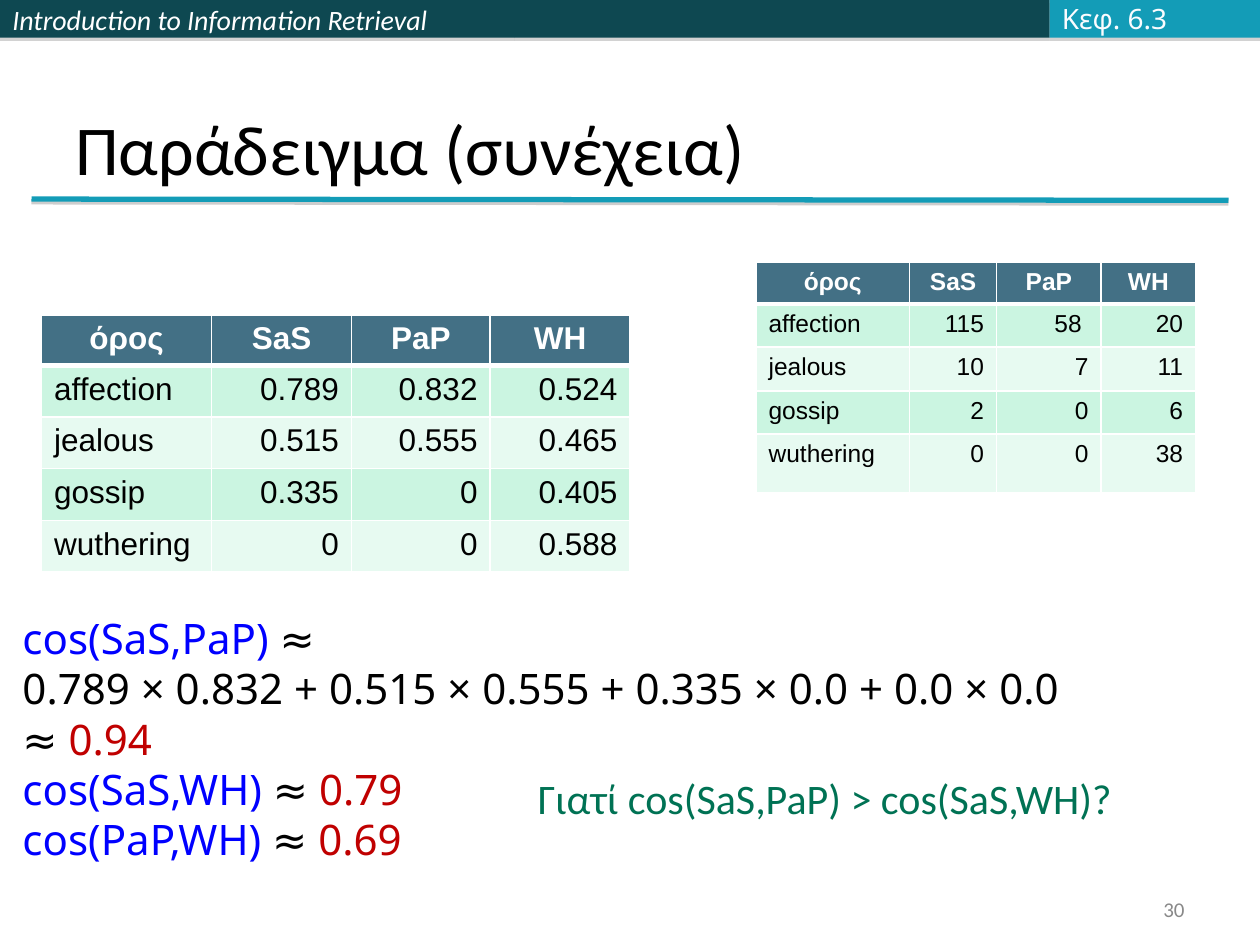
from pptx import Presentation
from pptx.dml.color import RGBColor
from pptx.enum.shapes import MSO_CONNECTOR, MSO_SHAPE
from pptx.enum.text import MSO_ANCHOR, PP_ALIGN
from pptx.oxml.ns import qn
from pptx.util import Inches, Pt
from lxml import etree

RECTANGLE = MSO_SHAPE.RECTANGLE
STRAIGHT = MSO_CONNECTOR.STRAIGHT
TOP, MIDDLE, BOTTOM = MSO_ANCHOR.TOP, MSO_ANCHOR.MIDDLE, MSO_ANCHOR.BOTTOM
LEFT, CENTER, RIGHT = PP_ALIGN.LEFT, PP_ALIGN.CENTER, PP_ALIGN.RIGHT

WHITE = RGBColor(0xFF, 0xFF, 0xFF)
OFF_WHITE = RGBColor(0xFB, 0xFC, 0xFF)
BLACK = RGBColor(0, 0, 0)
GRAY = RGBColor(0x89, 0x89, 0x89)
SHADOW_GRAY = RGBColor(0x80, 0x80, 0x80)
DARK_TEAL = RGBColor(0x0E, 0x48, 0x51)
TEAL = RGBColor(0x13, 0x9C, 0xB7)
HEADER_BLUE = RGBColor(0x43, 0x70, 0x85)
MINT = RGBColor(0xCB, 0xF5, 0xE1)
PALE_MINT = RGBColor(0xE7, 0xFA, 0xF1)
BLUE = RGBColor(0, 0, 0xFF)
RED = RGBColor(0xC0, 0, 0)
GREEN = RGBColor(0, 0x72, 0x54)

HEADINGS = ["όρος", "SaS", "PaP", "WH"]
WEIGHTS = [
    HEADINGS,
    ["affection", "0.789", "0.832", "0.524"],
    ["jealous", "0.515", "0.555", "0.465"],
    ["gossip", "0.335", "0", "0.405"],
    ["wuthering", "0", "0", "0.588"],
]
COUNTS = [
    HEADINGS,
    ["affection", "115", "58 ", "20"],
    ["jealous", "10", "7", "11"],
    ["gossip", "2", "0", "6"],
    ["wuthering", "0", "0", "38"],
]
SIMILARITIES = [
    [("cos(SaS,PaP) ", BLUE), ("≈", BLACK)],
    [("0.789 × 0.832 + 0.515 × 0.555 + 0.335 × 0.0 + 0.0 × 0.0", BLACK)],
    [("≈ ", BLACK), ("0.94", RED)],
    [("cos(SaS,WH)", BLUE), (" ≈ ", BLACK), ("0.79", RED)],
    [("cos(PaP,WH) ", BLUE), ("≈ ", BLACK), ("0.69", RED)],
]


def add_span(para, text, color, **formats):
    span = para.add_run()
    span.text = text
    span.font.color.rgb = color
    for name, value in formats.items():
        setattr(span.font, name, value)


def fill_text(frame, lines, align, anchor, **formats):
    frame.word_wrap = True
    frame.vertical_anchor = anchor
    for index, line in enumerate(lines):
        para = frame.add_paragraph() if index else frame.paragraphs[0]
        para.alignment = align
        for text, color in line:
            add_span(para, text, color, **formats)


def add_text(page, place, lines, size, font="Calibri", align=LEFT, anchor=TOP):
    box = page.shapes.add_textbox(*map(Inches, place))
    fill_text(box.text_frame, lines, align, anchor, size=Pt(size), name=font)


def add_shadow(shape, opacity, distance):
    effects = etree.SubElement(shape._element.spPr, qn("a:effectLst"))
    shadow = etree.SubElement(effects, qn("a:outerShdw"), blurRad="0",
                              dist=str(Pt(distance)), dir="5400000", rotWithShape="0")
    color = etree.SubElement(shadow, qn("a:srgbClr"), val=str(SHADOW_GRAY))
    etree.SubElement(color, qn("a:alpha"), val=str(opacity * 1000))


def add_band(page, left, width, color):
    band = page.shapes.add_shape(RECTANGLE, Inches(left), 0, Inches(width), Inches(0.3))
    band.fill.solid()
    band.fill.fore_color.rgb = color
    band.line.fill.background()
    add_shadow(band, 35, 1.8)
    return band


def add_title_rule(page):
    rule = page.shapes.add_connector(STRAIGHT, Inches(0.25), Inches(1.58),
                                     Inches(9.75), Inches(1.59))
    rule.line.color.rgb = TEAL
    rule.line.width = Pt(3)
    add_shadow(rule, 38, 1.6)


def add_borders(cell, widths):
    properties = cell._tc.get_or_add_tcPr()
    for index, (side, width) in enumerate(widths.items()):
        border = etree.Element(qn(f"a:{side}"), w=str(Pt(width)))
        fill = etree.SubElement(border, qn("a:solidFill"))
        etree.SubElement(fill, qn("a:srgbClr"), val=str(WHITE))
        properties.insert(index, border)


def add_term_table(page, left, top, columns, heights, rows, size):
    place = map(Inches, (left, top, sum(columns), sum(heights)))
    table = page.shapes.add_table(len(rows), len(columns), *place).table
    for column, width in zip(table.columns, columns):
        column.width = Inches(width)
    for row_index, (row, height) in enumerate(zip(rows, heights)):
        table.rows[row_index].height = Inches(height)
        header = row_index == 0
        color = HEADER_BLUE if header else (PALE_MINT, MINT)[row_index % 2]
        widths = {"lnL": 1, "lnR": 1, "lnT": 3 if row_index == 1 else 1,
                  "lnB": 3 if header else 1}
        for column_index, text in enumerate(row):
            cell = table.cell(row_index, column_index)
            cell.fill.solid()
            cell.fill.fore_color.rgb = color
            add_borders(cell, widths)
            para = cell.text_frame.paragraphs[0]
            para.alignment = CENTER if header else RIGHT if column_index else LEFT
            add_span(para, text, WHITE if header else BLACK,
                     size=Pt(size), name="Arial", bold=header)


def main():
    deck = Presentation()
    deck.slide_width, deck.slide_height = Inches(10), Inches(7.5)
    page = deck.slides.add_slide(deck.slide_layouts[6])

    course_band = add_band(page, 0, 4.08, DARK_TEAL)
    fill_text(course_band.text_frame, [[("Introduction to Information Retrieval", WHITE)]],
              LEFT, MIDDLE, size=Pt(16), name="Calibri", italic=True)
    add_band(page, 4.08, 4.25, DARK_TEAL)
    add_band(page, 8.33, 1.67, TEAL)
    add_title_rule(page)

    add_text(page, (0.5, 0.3, 9, 1.25), [[("Παράδειγμα (συνέχεια)", BLACK)]], 40,
             anchor=BOTTOM)
    add_term_table(page, 0.33, 2.5, [1.35, 1.11, 1.1, 1.11],
                   [0.37] + [0.41] * 4, WEIGHTS, 18)
    add_text(page, (0.08, 4.81, 9.49, 2.12), SIMILARITIES, 24, "Noto Sans")
    add_text(page, (4.17, 6.08, 4.8, 0.5),
             [[("Γιατί cos(SaS,PaP) > cos(SaS,WH)?", GREEN)]], 24)
    add_text(page, (8.33, -0.04, 1.1, 0.37), [[("Κεφ. 6.3", OFF_WHITE)]], 16,
             "Noto Sans", anchor=MIDDLE)
    add_text(page, (7.17, 7.08, 2.33, 0.27), [[("30", GRAY)]], 12,
             align=RIGHT, anchor=MIDDLE)
    add_term_table(page, 6, 2.08, [1.22, 0.69, 0.83, 0.75],
                   [0.33, 0.34, 0.35, 0.34, 0.47], COUNTS, 14)

    deck.save("out.pptx")


if __name__ == "__main__":
    main()
